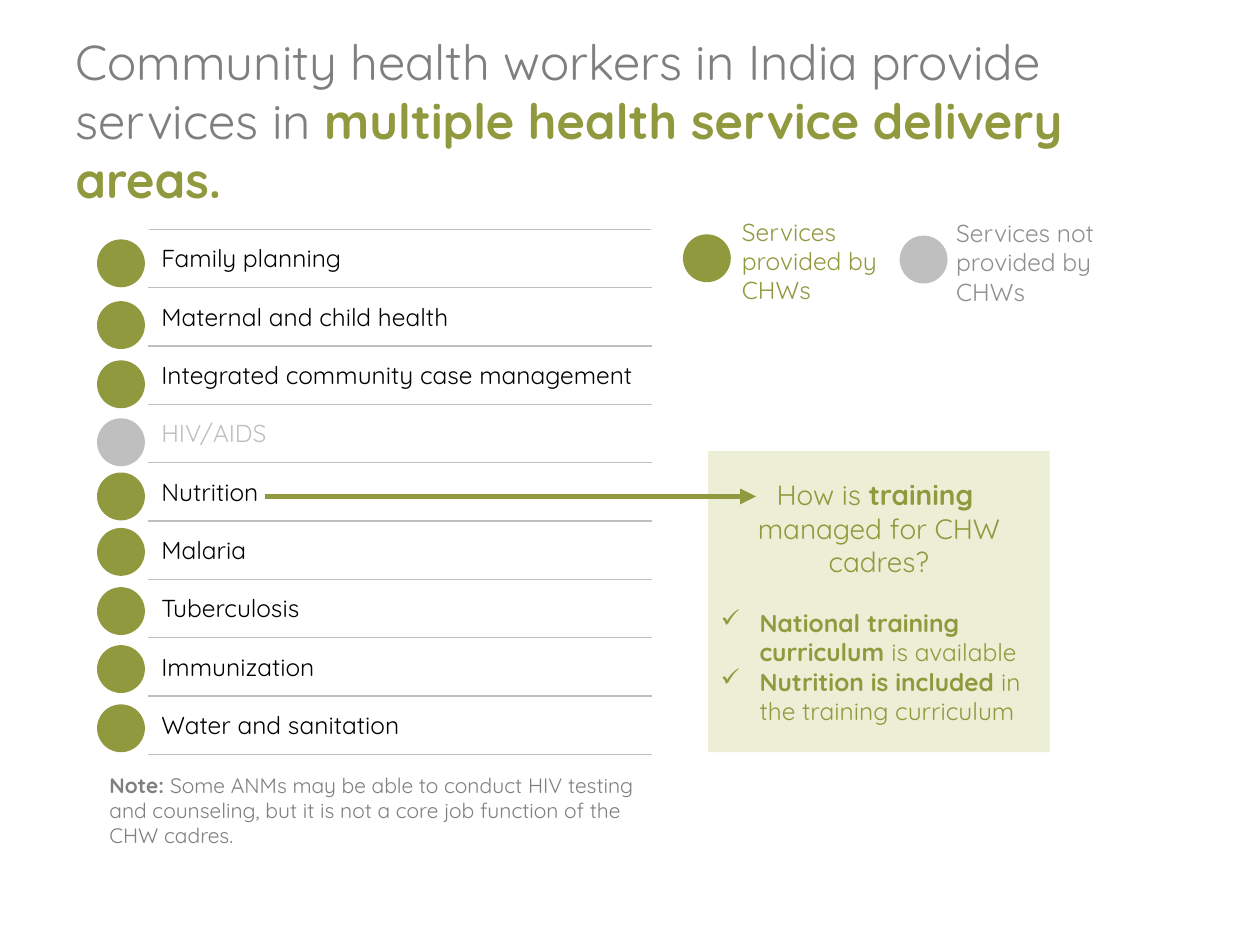
import pptx
import pptx.util
import pptx.dml.color
import pptx.enum.shapes
import pptx.enum.text
import pptx.oxml.ns
from lxml import etree
from pptx.util import Inches

# Content: a run is (text, bold)
TITLE = [("Community health workers in India provide services in ", False),
         ("multiple health service delivery areas.", True)]
# Area, provided by CHWs, top of its dot
AREAS = [("Family planning", True, 1.9),
         ("Maternal and child health", True, 2.39),
         ("Integrated community case management", True, 2.86),
         ("HIV/AIDS", False, 3.32),
         ("Nutrition", True, 3.75),
         ("Malaria", True, 4.19),
         ("Tuberculosis", True, 4.66),
         ("Immunization", True, 5.12),
         ("Water and sanitation", True, 5.59)]
# Label, dot colour, text colour, dot place, label place
LEGEND = [("Services provided by CHWs", "green", "green", (5.42, 1.86), (5.79, 1.67)),
          ("Services not provided by CHWs", "pale", "mid", (7.14, 1.87), (7.49, 1.68))]
NOTE = [("Note: ", True),
        ("Some ANMs may be able to conduct HIV testing and counseling, "
         "but it is not a core job function of the CHW cadres.", False)]
ASK = [[("How is ", False), ("training ", True)],
       [("managed for CHW cadres?", False)]]
FACTS = [[("National training curriculum ", True), ("is available", False)],
         [("Nutrition is included", True), (" in the training curriculum", False)]]

THEME = {
    "font": "Quicksand",
    "color": {"green": "91993E", "pale": "BFBFBF", "mid": "8F8F8F",
              "gray": "7F7F7F", "black": "000000", "tint": "ECEED5"},
    "size": {"title": 28, "ask": 16, "body": 14, "note": 12},
}
DOT = 0.38
SHAPE = pptx.enum.shapes.MSO_SHAPE
ALIGN = pptx.enum.text.PP_ALIGN
MIDDLE = pptx.enum.text.MSO_ANCHOR.MIDDLE


def rgb(name):
    return pptx.dml.color.RGBColor.from_string(THEME["color"][name])


def write(para, runs, size="body", color="black", align=ALIGN.LEFT, before=0):
    """Fill a paragraph with a string or a list of (text, bold) runs."""
    para.alignment = align
    if before:
        para.space_before = pptx.util.Pt(before)
    for text, bold in [(runs, False)] if isinstance(runs, str) else runs:
        run = para.add_run()
        run.text = text
        run.font.name = THEME["font"]
        run.font.size = pptx.util.Pt(THEME["size"][size])
        run.font.bold = bold
        run.font.color.rgb = rgb(color)


def label(slide, box, runs, **style):
    frame = slide.shapes.add_textbox(*map(Inches, box)).text_frame
    frame.word_wrap = True
    write(frame.paragraphs[0], runs, **style)


def block(slide, kind, box, color):
    shape = slide.shapes.add_shape(kind, *map(Inches, box))
    shape.shadow.inherit = False
    shape.fill.solid()
    shape.fill.fore_color.rgb = rgb(color)
    shape.line.fill.background()
    return shape


def dot(slide, left, top, color):
    block(slide, SHAPE.OVAL, (left, top, DOT, DOT), color)


def add(parent, tag, **attrs):
    return etree.SubElement(parent, pptx.oxml.ns.qn(tag), attrs)


def rule(cell):
    """Draw the top and bottom borders of a cell."""
    props = cell._tc.get_or_add_tcPr()
    for spot, side in enumerate(("a:lnT", "a:lnB")):
        line = add(props, side, w=str(pptx.util.Pt(1)))
        add(add(line, "a:solidFill"), "a:srgbClr", val=THEME["color"]["pale"])
        props.insert(spot, line)  # borders come before the fill


def tick(para):
    """Hang a check mark, drawn in the font of the text."""
    props = para._p.get_or_add_pPr()
    props.set("marL", str(Inches(0.31)))
    props.set("indent", str(-Inches(0.31)))
    add(props, "a:buChar", char="✓")


def main():
    deck = pptx.Presentation()
    deck.slide_width, deck.slide_height = Inches(10), Inches(7.5)
    slide = deck.slides.add_slide(deck.slide_layouts[5])

    # Title
    head = slide.shapes.title
    head.left, head.top, head.width, head.height = map(Inches, (0.5, 0.33, 8.67, 1.24))
    frame = head.text_frame
    frame.word_wrap = True
    frame.auto_size = pptx.enum.text.MSO_AUTO_SIZE.NONE
    frame.vertical_anchor = MIDDLE
    para = frame.paragraphs[0]
    write(para, TITLE, size="title", color="gray")
    para.runs[1].font.color.rgb = rgb("green")

    # Service areas
    grid = slide.shapes.add_table(len(AREAS), 2, *map(Inches, (0.67, 1.82, 4.5, 4.17))).table
    grid.first_row = grid.horz_banding = False
    grid.columns[0].width, grid.columns[1].width = Inches(0.51), Inches(3.99)
    for row, (name, given, top) in enumerate(AREAS):
        for col in range(2):
            grid.cell(row, col).fill.background()
        cell = grid.cell(row, 1)
        cell.vertical_anchor = MIDDLE
        write(cell.text_frame.paragraphs[0], name, color="black" if given else "pale")
        rule(cell)
        dot(slide, 0.77, top, "green" if given else "pale")

    # Legend
    for text, fill, ink, spot, place in LEGEND:
        dot(slide, *spot, fill)
        label(slide, (*place, 1.35, 0.81), text, color=ink)

    # Note
    label(slide, (0.77, 6.08, 4.49, 0.71), NOTE, size="note", color="gray")

    # Training panel
    panel = block(slide, SHAPE.RECTANGLE, (5.62, 3.58, 2.71, 2.39), "tint")
    frame = panel.text_frame
    frame.word_wrap = True
    frame.vertical_anchor = MIDDLE
    for row, runs in enumerate(ASK):
        para = frame.add_paragraph() if row else frame.paragraphs[0]
        write(para, runs, size="ask", color="green", align=ALIGN.CENTER)
    for row, runs in enumerate(FACTS):
        para = frame.add_paragraph()
        write(para, runs, color="green", before=0 if row else 17)
        tick(para)

    # Arrow from nutrition to the panel
    arrow = slide.shapes.add_connector(pptx.enum.shapes.MSO_CONNECTOR.STRAIGHT,
                                       *map(Inches, (2.1, 3.94, 6, 3.94)))
    arrow.line.color.rgb = rgb("green")
    arrow.line.width = pptx.util.Pt(3)
    props = arrow._element.spPr
    add(props.find(pptx.oxml.ns.qn("a:ln")), "a:tailEnd", type="triangle")
    add(props, "a:effectLst")

    deck.save("out.pptx")


if __name__ == "__main__":
    main()
